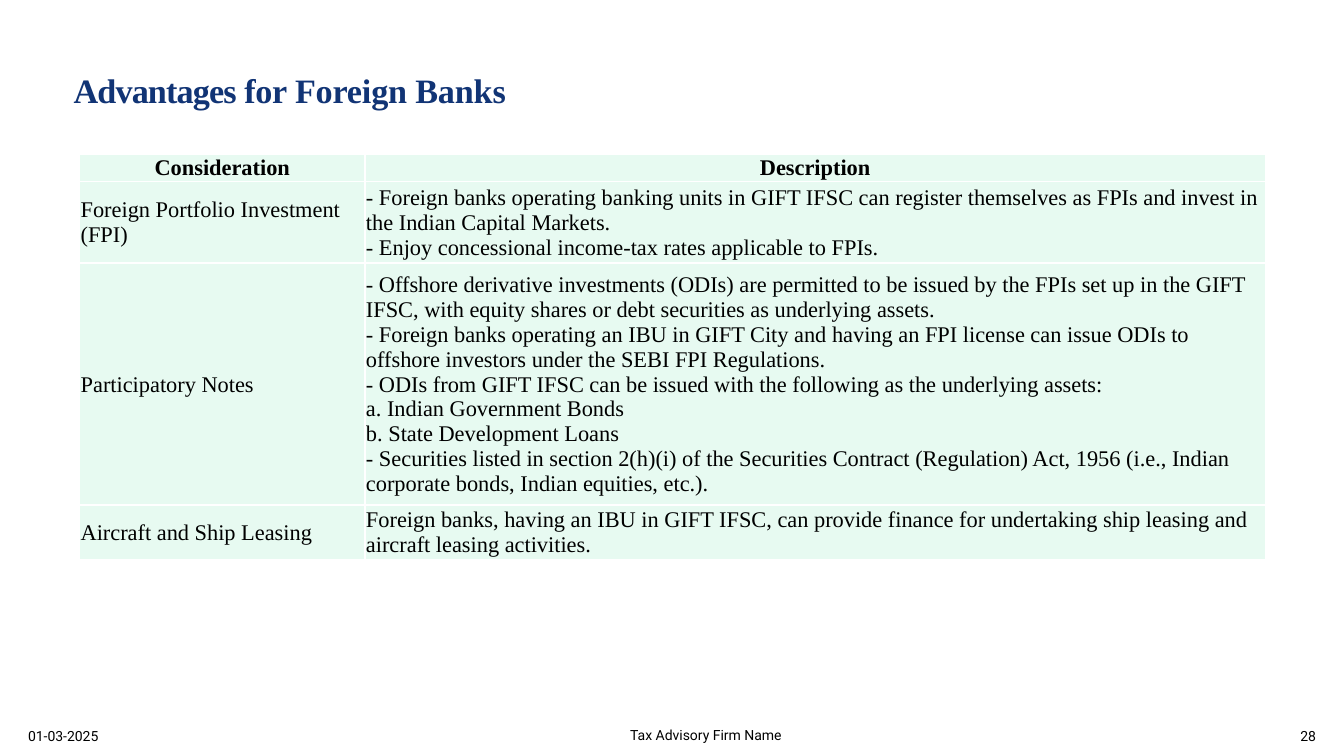
from dataclasses import dataclass
from lxml import etree
from pptx import Presentation
from pptx.dml.color import RGBColor
from pptx.enum.text import MSO_ANCHOR, PP_ALIGN
from pptx.oxml.ns import qn
from pptx.util import Inches, Pt

LEFT, CENTER, RIGHT = PP_ALIGN.LEFT, PP_ALIGN.CENTER, PP_ALIGN.RIGHT
TOP, MIDDLE, BOTTOM = MSO_ANCHOR.TOP, MSO_ANCHOR.MIDDLE, MSO_ANCHOR.BOTTOM
TITLE_ONLY = 5


@dataclass(frozen=True)
class Theme:
    navy: str = "113475"
    black: str = "000000"
    mint: str = "E7FAF1"
    white: str = "FFFFFF"
    serif: str = "Times New Roman"
    sans: str = "Roboto"
    head: float = 24.4
    body: float = 16
    foot: float = 10


THEME = Theme()

TITLE = [("Advantages ", -60), ("for ", -20), ("Foreign Banks", -10)]
COLS = [2.83, 8.93]
ROWS = [
    (0.27, "Consideration", ["Description"]),
    (0.81, "Foreign Portfolio Investment (FPI)", [
        "- Foreign banks operating banking units in GIFT IFSC can register themselves as FPIs "
        "and invest in the Indian Capital Markets.",
        "- Enjoy concessional income-tax rates applicable to FPIs.",
    ]),
    (2.4, "Participatory Notes", [
        "- Offshore derivative investments (ODIs) are permitted to be issued by the FPIs set up "
        "in the GIFT IFSC, with equity shares or debt securities as underlying assets.",
        "- Foreign banks operating an IBU in GIFT City and having an FPI license can issue ODIs "
        "to offshore investors under the SEBI FPI Regulations.",
        "- ODIs from GIFT IFSC can be issued with the following as the underlying assets:",
        "a. Indian Government Bonds",
        "b. State Development Loans",
        "- Securities listed in section 2(h)(i) of the Securities Contract (Regulation) Act, "
        "1956 (i.e., Indian corporate bonds, Indian equities, etc.).",
    ]),
    (0.54, "Aircraft and Ship Leasing", [
        "Foreign banks, having an IBU in GIFT IFSC, can provide finance for undertaking ship "
        "leasing and aircraft leasing activities.",
    ]),
]
FOOT = [
    ((0.18, 6.93, 0.97, 0.5), "01-03-2025", LEFT),
    ((4.89, 6.92, 4.22, 0.5), "Tax Advisory Firm Name", CENTER),
    ((12.67, 6.93, 0.48, 0.5), "28", RIGHT),
]


def apply(item, values):
    for name, value in values.items():
        setattr(item, name, value)


def style(run, size, face, color, bold=False):
    apply(run.font, {"size": Pt(size), "name": face, "bold": bold})
    run.font.color.rgb = RGBColor.from_string(color)


def add_title(slide):
    title = slide.shapes.title
    apply(title, {"left": Inches(0.71), "top": Inches(0.65),
                  "width": Inches(5.3), "height": Inches(0.44)})
    frame = title.text_frame
    apply(frame, {"margin_left": Inches(0.02), "margin_top": Inches(0.04),
                  "margin_right": 0, "margin_bottom": 0,
                  "vertical_anchor": TOP, "word_wrap": True})
    para = frame.paragraphs[0]
    para.alignment = LEFT
    for text, gap in TITLE:
        run = para.add_run()
        run.text = text
        style(run, THEME.head, THEME.serif, THEME.navy, True)
        run.font._element.set("spc", str(gap))


def add_edges(cell):
    props = cell._tc.get_or_add_tcPr()
    for side in ("lnL", "lnR", "lnT", "lnB"):
        line = etree.SubElement(props, qn(f"a:{side}"), w=str(Pt(1)))
        fill = etree.SubElement(line, qn("a:solidFill"))
        etree.SubElement(fill, qn("a:srgbClr"), val=THEME.white)


def fill_cell(cell, text, head):
    apply(cell, {"margin_left": Inches(0.01), "margin_top": Inches(0.01),
                 "margin_right": Inches(0.01), "margin_bottom": 0,
                 "vertical_anchor": MIDDLE})
    add_edges(cell)
    cell.fill.solid()
    cell.fill.fore_color.rgb = RGBColor.from_string(THEME.mint)
    para = cell.text_frame.paragraphs[0]
    para.text = text
    para.alignment = CENTER if head else LEFT
    for run in para.runs:
        style(run, THEME.body, THEME.serif, THEME.black, head)
    for mark in para._p.findall(qn("a:br")):
        etree.SubElement(mark, qn("a:rPr"), sz=str(THEME.body * 100))


def add_grid(slide):
    high = sum(row[0] for row in ROWS)
    table = slide.shapes.add_table(len(ROWS), len(COLS), Inches(0.79), Inches(1.53),
                                   Inches(sum(COLS)), Inches(high)).table
    for col, width in zip(table.columns, COLS):
        col.width = Inches(width)
    for index, (height, label, lines) in enumerate(ROWS):
        table.rows[index].height = Inches(height)
        for place, text in enumerate((label, "\v".join(lines))):
            fill_cell(table.cell(index, place), text, index == 0)


def add_foot(slide, box, text, align):
    frame = slide.shapes.add_textbox(*map(Inches, box)).text_frame
    apply(frame, {"word_wrap": True, "vertical_anchor": BOTTOM})
    para = frame.paragraphs[0]
    para.alignment = align
    run = para.add_run()
    run.text = text
    style(run, THEME.foot, THEME.sans, THEME.black)


def main():
    deck = Presentation()
    apply(deck, {"slide_width": Inches(13.33), "slide_height": Inches(7.5)})
    slide = deck.slides.add_slide(deck.slide_layouts[TITLE_ONLY])
    add_title(slide)
    add_grid(slide)
    for box, text, align in FOOT:
        add_foot(slide, box, text, align)
    deck.save("out.pptx")


if __name__ == "__main__":
    main()
